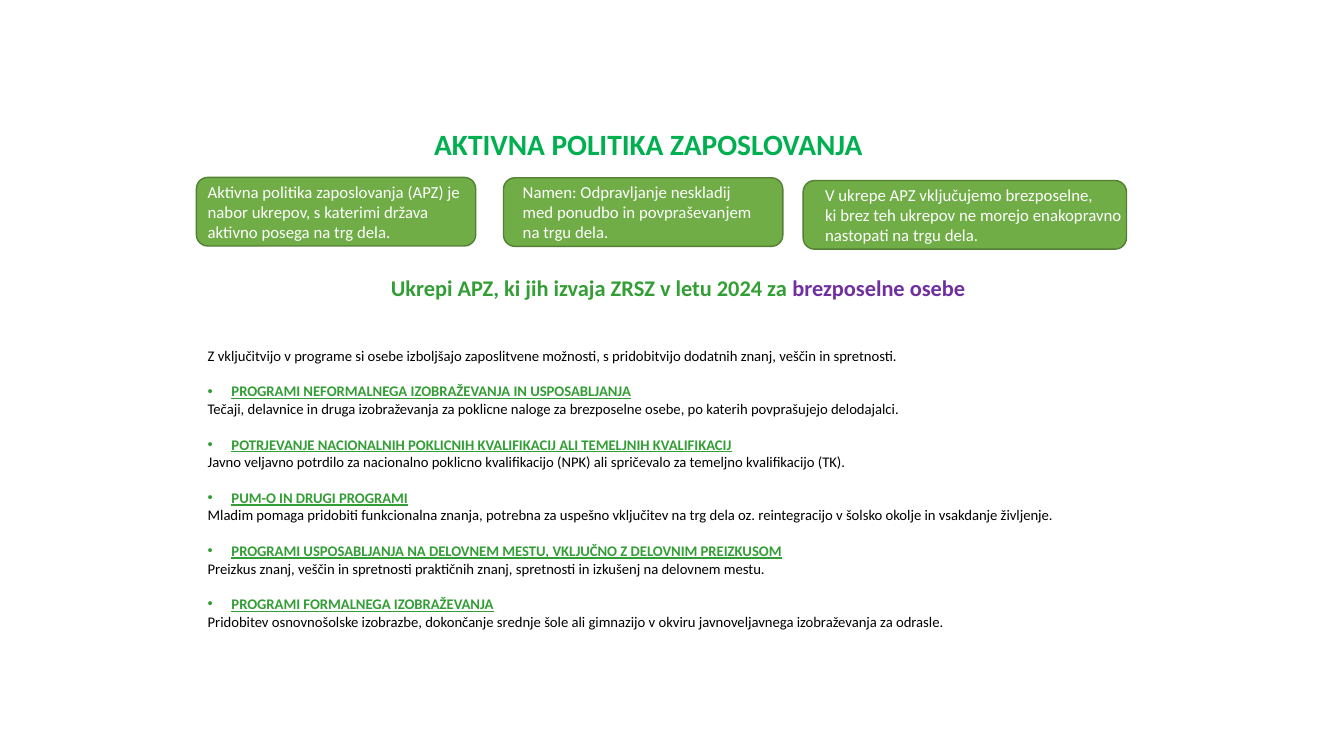
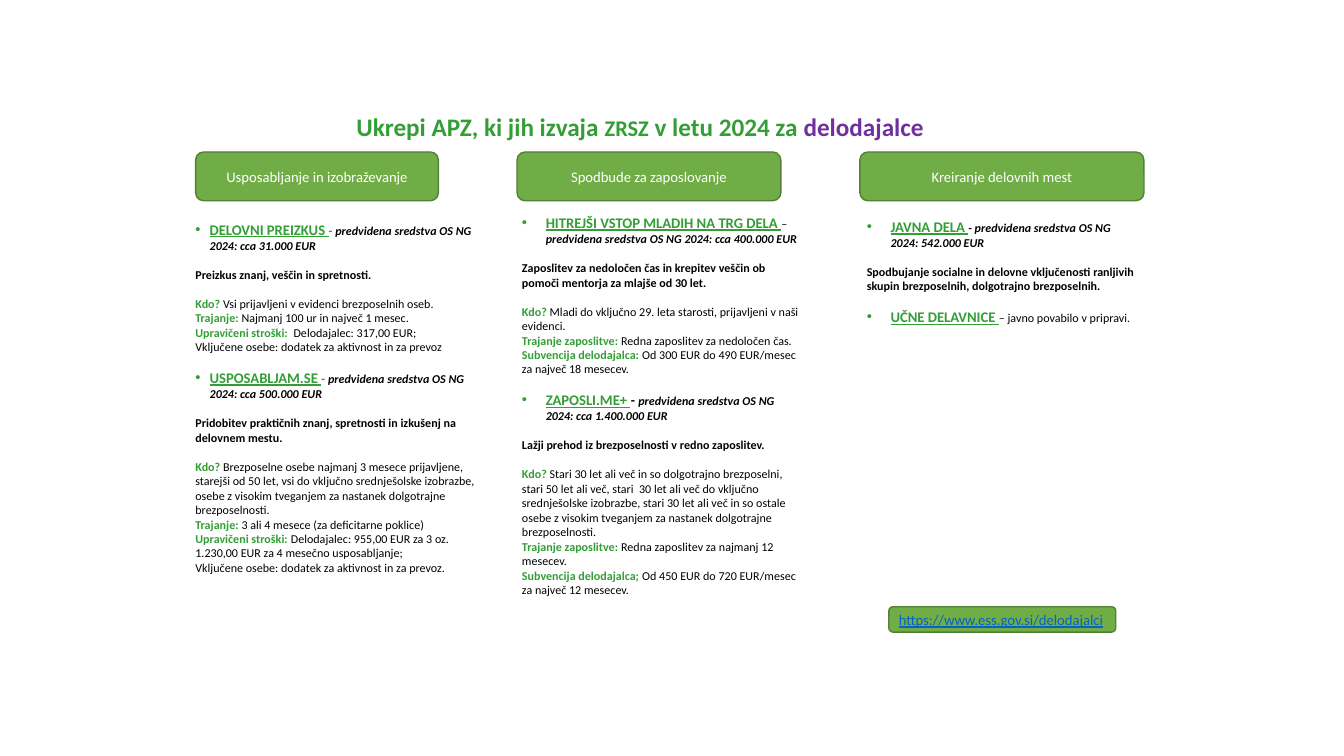
from lxml import etree
from pptx import Presentation
from pptx.dml.color import RGBColor
from pptx.enum import shapes, text
from pptx.oxml import ns
from pptx.util import Cm, Pt

GREEN = RGBColor(0x33, 0x9E, 0x35)
BRIGHT = RGBColor(0x00, 0xB0, 0x50)
LEAF = RGBColor(0x70, 0xAD, 0x47)
EDGE = RGBColor(0x53, 0x80, 0x35)
PURPLE = RGBColor(0x70, 0x30, 0xA0)
BLUE = RGBColor(0x05, 0x63, 0xC1)
BLACK = RGBColor(0, 0, 0)
WHITE = RGBColor(255, 255, 255)

LEFT, MID = text.PP_ALIGN.LEFT, text.PP_ALIGN.CENTER
BASE = dict(name="Calibri", size=Pt(8.6), bold=False, italic=False, underline=False, color=BLACK)
STYLES = {
    "title": dict(size=Pt(21), bold=True, color=BRIGHT),
    "name": dict(size=Pt(18), bold=True, color=GREEN),
    "group": dict(size=Pt(18), bold=True, color=PURPLE),
    "sub": dict(size=Pt(16), bold=True, color=GREEN),
    "subgroup": dict(size=Pt(16), bold=True, color=PURPLE),
    "card": dict(size=Pt(12), color=WHITE),
    "pill": dict(size=Pt(10.5), color=WHITE),
    "link": dict(size=Pt(10.5), underline=True, color=BLUE),
    "head": dict(size=Pt(10.5), bold=True, underline=True, color=GREEN),
    "plain": dict(size=Pt(10.5)),
    "dash": dict(size=Pt(9), bold=True, color=GREEN),
    "bigdash": dict(size=Pt(10.5), bold=True, italic=True),
    "fund": dict(bold=True, italic=True),
    "lead": dict(bold=True),
    "label": dict(bold=True, color=GREEN),
    "note": {},
}


def flow(frame, blocks, gap=0, ind=0, side=LEFT):
    frame.word_wrap = True
    frame.auto_size = text.MSO_AUTO_SIZE.NONE
    first = True
    for block in blocks:
        for n, runs in enumerate(block):
            par = frame.paragraphs[0] if first else frame.add_paragraph()
            props = par._p.get_or_add_pPr()
            dot = runs[0][0] == "head"
            props.set("marL", str(Cm(ind) if dot else 0))
            props.set("indent", str(-Cm(ind) if dot else 0))
            if dot:
                etree.SubElement(props, ns.qn("a:buFont")).set("typeface", "Arial")
                etree.SubElement(props, ns.qn("a:buChar")).set("char", "•")
            else:
                etree.SubElement(props, ns.qn("a:buNone"))
            par.alignment = side
            par.space_before = Pt(0 if first or n else gap)
            first = False
            for style, words in runs:
                run = par.add_run()
                run.text = words
                for key, val in {**BASE, **STYLES[style]}.items():
                    if key == "color":
                        run.font.color.rgb = val
                    else:
                        setattr(run.font, key, val)


def box(slide, spot, pars, left=0, right=0, side=LEFT):
    shape = slide.shapes.add_shape(shapes.MSO_SHAPE.ROUNDED_RECTANGLE, *map(Cm, spot))
    shape.shadow.inherit = False
    shape.fill.solid()
    shape.fill.fore_color.rgb = LEAF
    shape.line.color.rgb = EDGE
    shape.line.width = Pt(1)
    frame = shape.text_frame
    frame.margin_left, frame.margin_right = Cm(left), Cm(right)
    frame.margin_top = frame.margin_bottom = 0
    frame.vertical_anchor = text.MSO_ANCHOR.MIDDLE
    flow(frame, [pars], side=side)


deck = Presentation()
deck.slide_width, deck.slide_height = Cm(33.87), Cm(19.05)
one = deck.slides.add_slide(deck.slide_layouts[1])
two = deck.slides.add_slide(deck.slide_layouts[4])

TITLES = [
    (one, (9.47, 3.05, 13.74, 1.14), [("title", "AKTIVNA POLITIKA ZAPOSLOVANJA")]),
    (two, (6.53, 2.67, 19.2, 1.02), [
        ("name", "Ukrepi APZ, ki jih izvaja "), ("sub", "ZRSZ"),
        ("name", " v letu 2024 za "), ("group", "delodajalce")]),
]
for slide, spot, runs in TITLES:
    title = slide.shapes.title
    title.left, title.top, title.width, title.height = map(Cm, spot)
    title.text_frame.vertical_anchor = text.MSO_ANCHOR.TOP
    flow(title.text_frame, [[runs]], side=MID)

CARDS = [
    ((4.95, 4.47, 7.04, 1.73), 0.2, 0, [
        "Aktivna politika zaposlovanja (APZ) je nabor ukrepov, s katerimi država aktivno posega na trg dela."]),
    ((12.69, 4.48, 7.04, 1.73), 0.4, 0.64, [
        "Namen: Odpravljanje neskladij med ponudbo in povpraševanjem na trgu dela."]),
    ((20.24, 4.55, 8.15, 1.73), 0.47, 0, [
        "V ukrepe APZ vključujemo brezposelne,",
        "ki brez teh ukrepov ne morejo enakopravno nastopati na trgu dela."]),
]
for spot, left, right, lines in CARDS:
    box(one, spot, [[("card", line)] for line in lines], left, right)

sub = one.shapes.add_textbox(Cm(7.49), Cm(6.78), Cm(19.2), Cm(0.94))
flow(sub.text_frame, [[[("sub", "Ukrepi APZ, ki jih izvaja ZRSZ v letu 2024 za "),
                        ("subgroup", "brezposelne osebe")]]], side=MID)

PLANS = [
    ("PROGRAMI NEFORMALNEGA IZOBRAŽEVANJA IN USPOSABLJANJA",
     "Tečaji, delavnice in druga izobraževanja za poklicne naloge za brezposelne osebe, po katerih povprašujejo delodajalci."),
    ("POTRJEVANJE NACIONALNIH POKLICNIH KVALIFIKACIJ ALI TEMELJNIH KVALIFIKACIJ",
     "Javno veljavno potrdilo za nacionalno poklicno kvalifikacijo (NPK) ali spričevalo za temeljno kvalifikacijo (TK)."),
    ("PUM-O IN DRUGI PROGRAMI",
     "Mladim pomaga pridobiti funkcionalna znanja, potrebna za uspešno vključitev na trg dela oz. reintegracijo v šolsko okolje in vsakdanje življenje."),
    ("PROGRAMI USPOSABLJANJA NA DELOVNEM MESTU, VKLJUČNO Z DELOVNIM PREIZKUSOM",
     "Preizkus znanj, veščin in spretnosti praktičnih znanj, spretnosti in izkušenj na delovnem mestu."),
    ("PROGRAMI FORMALNEGA IZOBRAŽEVANJA",
     "Pridobitev osnovnošolske izobrazbe, dokončanje srednje šole ali gimnazijo v okviru javnoveljavnega izobraževanja za odrasle."),
]
INTRO = ("Z vključitvijo v programe si osebe izboljšajo zaposlitvene možnosti, "
         "s pridobitvijo dodatnih znanj, veščin in spretnosti.")
plans = [[[("plain", INTRO)]]] + [[[("head", head)], [("plain", about)]] for head, about in PLANS]

PILLS = [
    (4.93, 6.12, "Usposabljanje in izobraževanje"),
    (13.03, 6.65, "Spodbude za zaposlovanje"),
    (21.67, 7.16, "Kreiranje delovnih mest"),
]
for left, width, words in PILLS:
    box(two, (left, 3.83, width, 1.23), [[("pill", words)]], side=MID)

train = [
    [[("head", "DELOVNI PREIZKUS "), ("dash", "- "),
      ("fund", "predvidena sredstva OS NG 2024: cca 31.000 EUR")]],
    [[("lead", "Preizkus znanj, veščin in spretnosti.")]],
    [[("label", "Kdo? "), ("note", "Vsi prijavljeni v evidenci brezposelnih oseb.")],
     [("label", "Trajanje: "), ("note", "Najmanj 100 ur in največ 1 mesec.")],
     [("label", "Upravičeni stroški:  "), ("note", "Delodajalec: 317,00 EUR;")],
     [("note", "Vključene osebe: dodatek za aktivnost in za prevoz")]],
    [[("head", "USPOSABLJAM.SE "), ("dash", "- "),
      ("fund", "predvidena sredstva OS NG 2024: cca 500.000 EUR")]],
    [[("lead", "Pridobitev praktičnih znanj, spretnosti in izkušenj na delovnem mestu.")]],
    [[("label", "Kdo? "), ("note", "Brezposelne osebe najmanj 3 mesece prijavljene, starejši od 50 let, vsi do vključno srednješolske izobrazbe, osebe z visokim tveganjem za nastanek dolgotrajne brezposelnosti.")],
     [("label", "Trajanje: "), ("note", "3 ali 4 mesece (za deficitarne poklice)")],
     [("label", "Upravičeni stroški: "), ("note", "Delodajalec: 955,00 EUR za 3 oz. 1.230,00 EUR za 4 mesečno usposabljanje;")],
     [("note", "Vključene osebe: dodatek za aktivnost in za prevoz.")]],
]
hire = [
    [[("head", "HITREJŠI VSTOP MLADIH NA TRG DELA "), ("note", "– "),
      ("fund", "predvidena sredstva OS NG 2024: cca 400.000 EUR")]],
    [[("lead", "Zaposlitev za nedoločen čas in krepitev veščin ob pomoči mentorja za mlajše od 30 let.")]],
    [[("label", "Kdo? "), ("note", "Mladi do vključno 29. leta starosti, prijavljeni v naši evidenci.")],
     [("label", "Trajanje zaposlitve: "), ("note", "Redna zaposlitev za nedoločen čas.")],
     [("label", "Subvencija delodajalca: "), ("note", "Od 300 EUR do 490 EUR/mesec za največ 18 mesecev.")]],
    [[("head", "ZAPOSLI.ME+ "), ("bigdash", "- "),
      ("fund", "predvidena sredstva OS NG 2024: cca 1.400.000 EUR")]],
    [[("lead", "Lažji prehod iz brezposelnosti v redno zaposlitev.")]],
    [[("label", "Kdo? "), ("note", "Stari 30 let ali več in so dolgotrajno brezposelni,")],
     [("note", "stari 50 let ali več, stari  30 let ali več do vključno srednješolske izobrazbe, stari 30 let ali več in so ostale osebe z visokim tveganjem za nastanek dolgotrajne brezposelnosti.")],
     [("label", "Trajanje zaposlitve: "), ("note", "Redna zaposlitev za najmanj 12 mesecev.")],
     [("label", "Subvencija delodajalca; "), ("note", "Od 450 EUR do 720 EUR/mesec za največ 12 mesecev.")]],
]
make = [
    [[("head", "JAVNA DELA "), ("fund", "- predvidena sredstva OS NG 2024: 542.000 EUR")]],
    [[("lead", "Spodbujanje socialne in delovne vključenosti ranljivih skupin brezposelnih, dolgotrajno brezposelnih.")]],
    [[("head", "UČNE DELAVNICE "), ("note", "– javno povabilo v pripravi.")]],
]

LISTS = [
    (one, 1, (4.98, 8.61, 23.44, 7.44), plans, 12.8, 0.6),
    (two, 1, (4.67, 5.43, 8, 9.6), train, 10.5, 0.36),
    (two, 2, (12.9, 5.26, 7.65, 10.36), hire, 10.5, 0.6),
    (two, 3, (21.59, 5.36, 7.34, 3), make, 10.5, 0.6),
]
for slide, slot, spot, blocks, gap, ind in LISTS:
    body = slide.placeholders[slot]
    body.left, body.top, body.width, body.height = map(Cm, spot)
    body.text_frame.vertical_anchor = text.MSO_ANCHOR.TOP
    flow(body.text_frame, blocks, gap, ind)

spare = two.placeholders[4]._element
spare.getparent().remove(spare)

box(two, (22.4, 15.29, 5.72, 0.64), [[("link", "https://www.ess.gov.si/delodajalci")]], 0.22)

deck.save("out.pptx")
